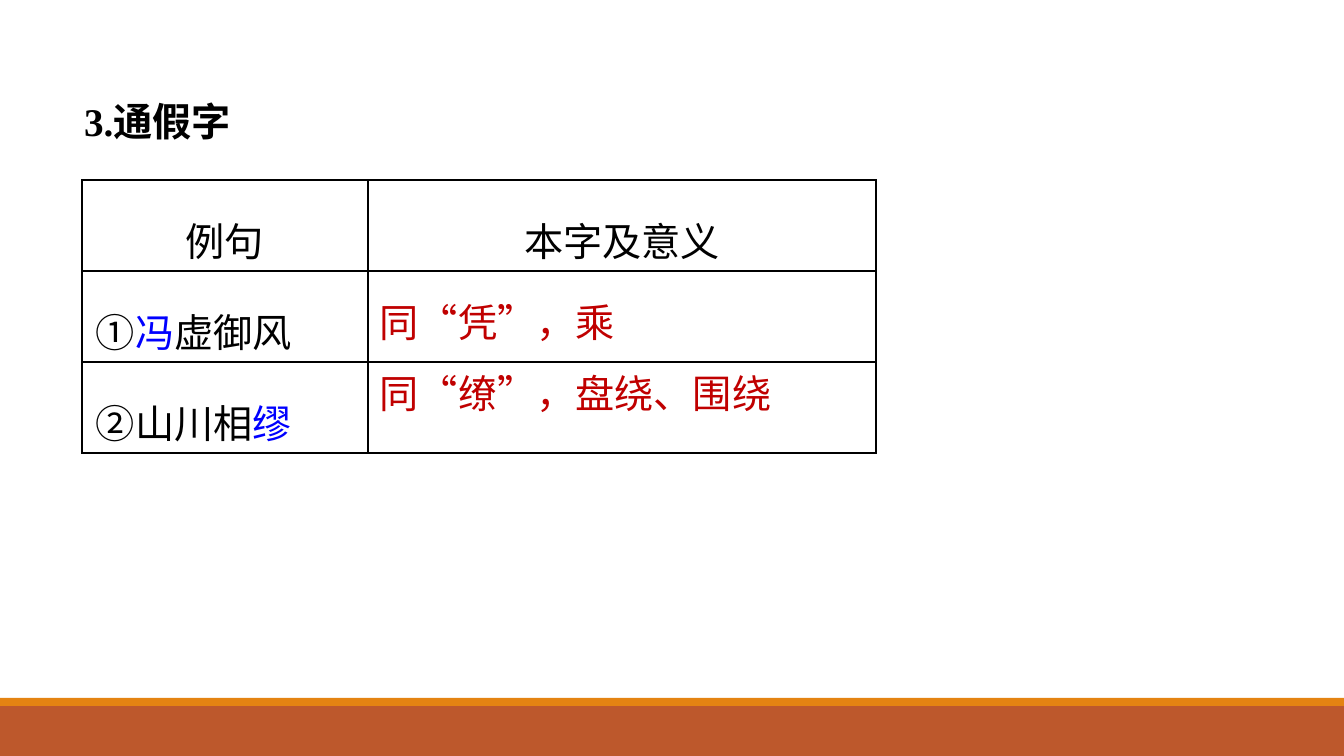
from dataclasses import dataclass

from lxml.etree import SubElement
from pptx import Presentation
from pptx.dml.color import RGBColor
from pptx.enum.shapes import MSO_SHAPE as Shape
from pptx.enum.text import MSO_ANCHOR as Anchor, MSO_AUTO_SIZE as Fit, PP_ALIGN as Align
from pptx.oxml.ns import qn
from pptx.util import Emu, Pt

BLACK = RGBColor(0, 0, 0)
BLUE = RGBColor(0, 0, 255)
RED = RGBColor(0xC0, 0, 0)
RUST = RGBColor(0xBD, 0x58, 0x2C)
AMBER = RGBColor(0xE4, 0x83, 0x12)
SERIF = "Times New Roman"
SANS = "Noto Sans CJK SC"


@dataclass
class Bar:
    top: int
    high: int
    color: RGBColor


@dataclass
class Run:
    text: str
    color: RGBColor = BLACK
    font: str = SERIF


BARS = [Bar(706, 50, RUST), Bar(698, 8, AMBER)]
HEADS = ["例句", "本字及意义"]
LINES = [
    [Run("①", font=SANS), Run("冯", BLUE), Run("虚御风")],
    [Run("②", font=SANS), Run("山川相"), Run("缪", BLUE)],
]
NOTES = [("凭", "，乘"), ("缭", "，盘绕、围绕")]


def px(num: int) -> Emu:
    return Emu(round(num * 914400 / 100.8))


def place(shape, left: int, top: int, wide: int, high: int) -> None:
    shape.left, shape.top, shape.width, shape.height = map(px, (left, top, wide, high))


def write(para, runs: list[Run], *, align=Align.LEFT, space: float = 1.5,
          bold: bool = False, indent: int = 0) -> None:
    para.alignment = align
    para.line_spacing = space
    if indent:
        para._p.get_or_add_pPr().set("marL", str(px(indent)))
    for item in runs:
        run = para.add_run()
        run.text = item.text
        font = run.font
        font.size, font.bold, font.name = Pt(28), bold, item.font
        font.color.rgb = item.color
        SubElement(font._element, qn("a:ea"), typeface=SANS)


def frame(cell) -> None:
    """Give a cell thin black borders, no fill and narrow margins."""
    props = cell._tc.get_or_add_tcPr()
    for side in "LRTB":
        line = SubElement(props, qn(f"a:ln{side}"), w=str(Pt(1)))
        fill = SubElement(line, qn("a:solidFill"))
        SubElement(fill, qn("a:srgbClr"), val=str(BLACK))
    cell.fill.background()
    cell.vertical_anchor = Anchor.MIDDLE
    cell.margin_left = cell.margin_right = px(6)
    cell.margin_top = cell.margin_bottom = 0


def add_bar(slide, bar: Bar) -> None:
    shape = slide.shapes.add_shape(Shape.RECTANGLE, 0, px(bar.top), px(1344), px(bar.high))
    shape.shadow.inherit = False
    shape.fill.solid()
    shape.fill.fore_color.rgb = bar.color
    shape.line.fill.background()


def add_title(slide) -> None:
    title = slide.shapes.title
    place(title, 74, 80, 1196, 82)
    body = title.text_frame
    body.auto_size = Fit.NONE
    body.vertical_anchor = Anchor.TOP
    write(body.paragraphs[0], [Run("3.通假字")], align=Align.JUSTIFY, space=1.25, bold=True)


def add_grid(slide) -> None:
    table = slide.shapes.add_table(3, 2, px(82), px(180), px(794), px(273)).table
    for col, wide in zip(table.columns, (286, 508)):
        col.width = px(wide)
    for row in table.rows:
        row.height = px(91)
    for cell in table.iter_cells():
        frame(cell)
    for col, head in enumerate(HEADS):
        write(table.cell(0, col).text_frame.paragraphs[0], [Run(head)], align=Align.CENTER)
    for row, runs in enumerate(LINES, 1):
        write(table.cell(row, 0).text_frame.paragraphs[0], runs, indent=8)


def add_notes(slide) -> None:
    body = slide.shapes.add_textbox(px(370), px(270), px(671), px(169)).text_frame
    body.word_wrap = True
    body.auto_size = Fit.SHAPE_TO_FIT_TEXT
    for num, (word, sense) in enumerate(NOTES):
        para = body.add_paragraph() if num else body.paragraphs[0]
        runs = [Run("同", RED), Run("“", RED, SANS), Run(word, RED),
                Run("”", RED, SANS), Run(sense, RED)]
        write(para, runs, align=Align.JUSTIFY)


def main() -> None:
    deck = Presentation()
    deck.slide_width, deck.slide_height = px(1344), px(756)
    slide = deck.slides.add_slide(deck.slide_layouts[5])
    for bar in BARS:
        add_bar(slide, bar)
    add_title(slide)
    add_grid(slide)
    add_notes(slide)
    deck.save("out.pptx")


if __name__ == "__main__":
    main()
